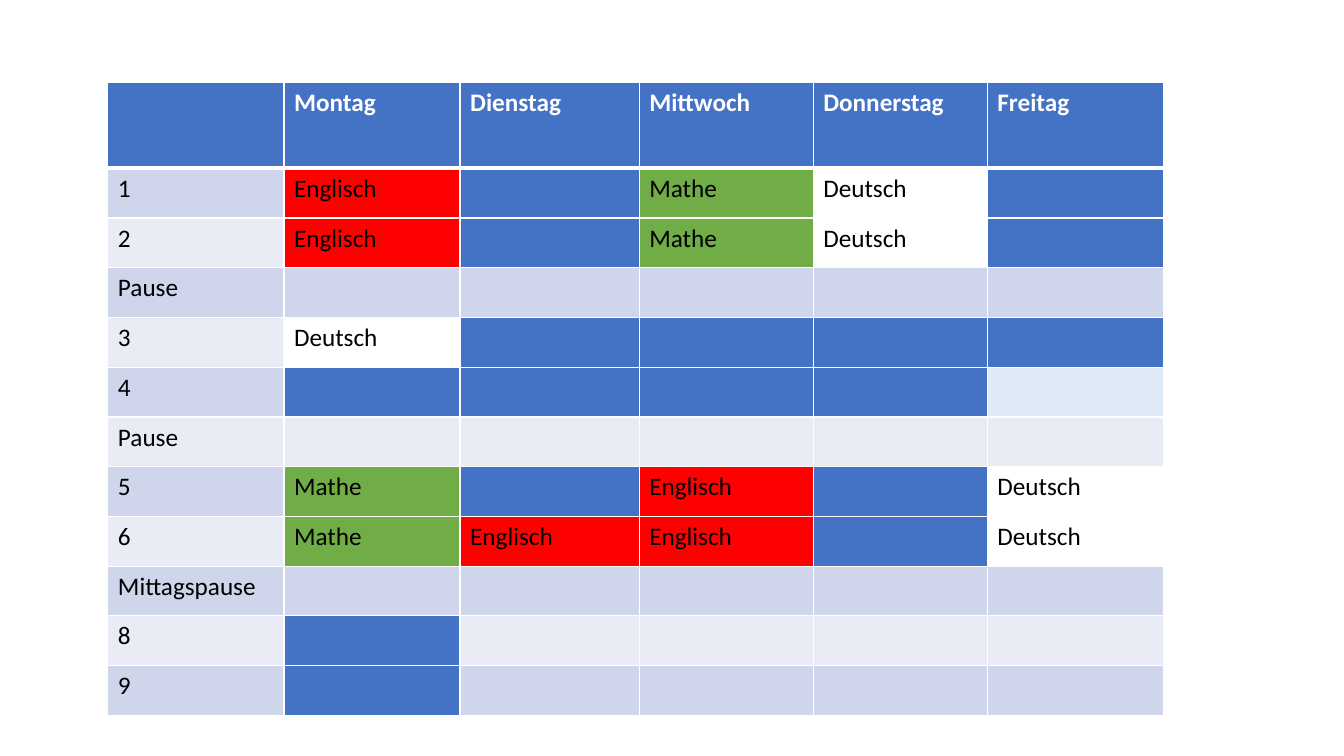
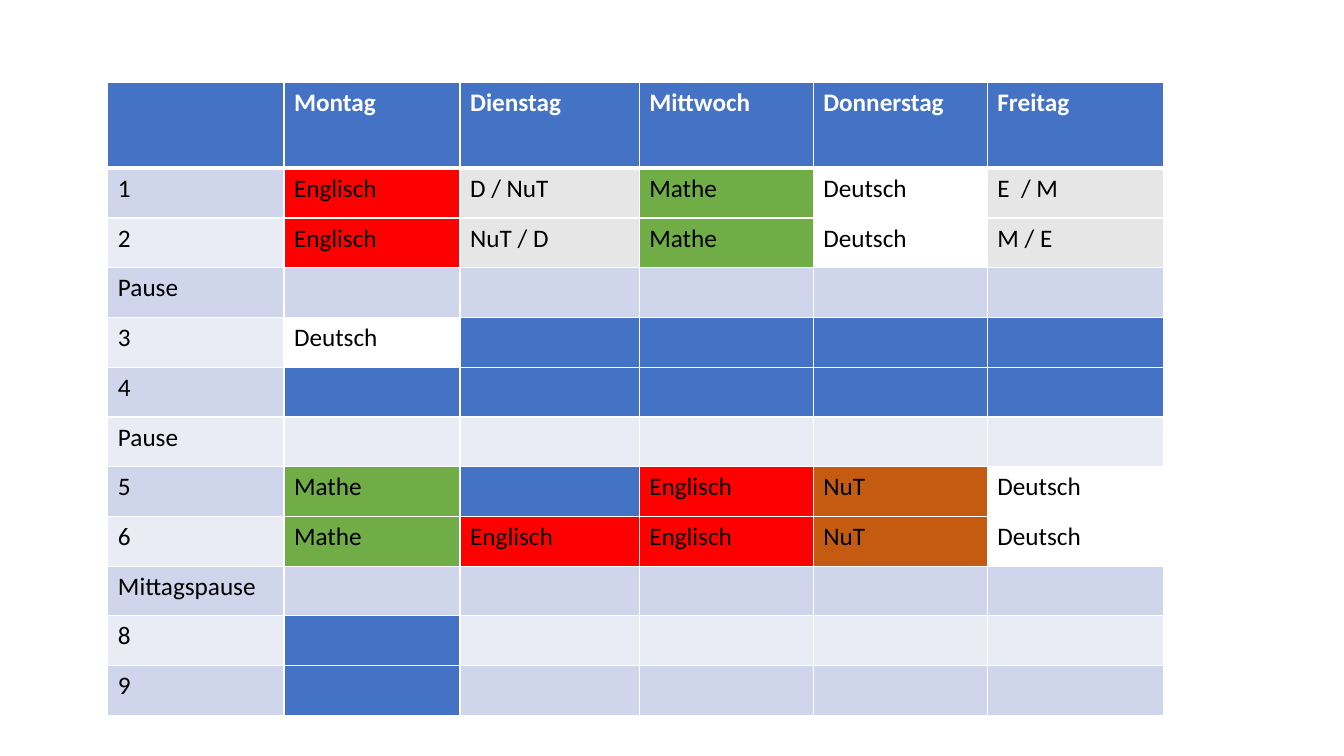
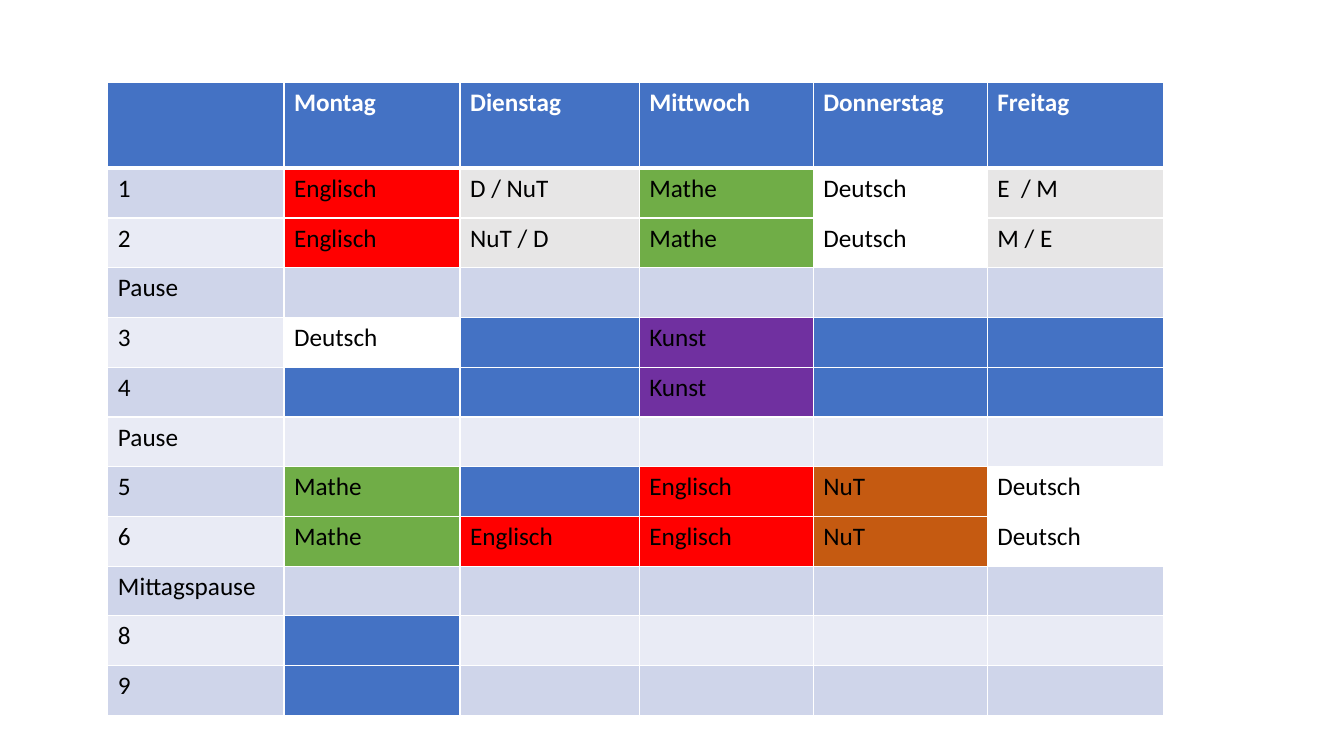
"""Build three stages of a weekly school timetable."""
from dataclasses import dataclass

from lxml import etree
from pptx import Presentation, util as u
from pptx.dml.color import RGBColor
from pptx.oxml.ns import qn

OPEN, LIGHT, BAND = "open", "light", "band"
BLANKS = (OPEN, LIGHT, BAND)
DAYS = ["", "Montag", "Dienstag", "Mittwoch", "Donnerstag", "Freitag"]
PERIODS = [
    ("1", ["Englisch", OPEN, "Mathe", "Deutsch", OPEN]),
    ("2", ["Englisch", OPEN, "Mathe", "Deutsch", OPEN]),
    ("Pause", [BAND] * 5),
    ("3", ["Deutsch"] + [OPEN] * 4),
    ("4", [OPEN] * 5),
    ("Pause", [BAND] * 5),
    ("5", ["Mathe", OPEN, "Englisch", OPEN, "Deutsch"]),
    ("6", ["Mathe", "Englisch", "Englisch", OPEN, "Deutsch"]),
    ("Mittagspause", [BAND] * 5),
    ("8", [OPEN] + [BAND] * 4),
    ("9", [OPEN] + [BAND] * 4),
]
SCIENCE = {
    ("1", "Dienstag"): "D / NuT", ("1", "Freitag"): "E  / M",
    ("2", "Dienstag"): "NuT / D", ("2", "Freitag"): "M / E",
    ("5", "Donnerstag"): "NuT", ("6", "Donnerstag"): "NuT",
}
ART = {("3", "Mittwoch"): "Kunst", ("4", "Mittwoch"): "Kunst"}
STAGES = [{("4", "Freitag"): LIGHT}, SCIENCE, SCIENCE | ART]

SLIDE_SIZE = (13.33, 7.5)
LEFT, TOP, WIDTH, HEIGHT = 1.07, 0.82, 10.47, 6.28
HEADER_HEIGHT = 0.85
DAY_WEIGHTS = [1.75, 1.75, 1.78, 1.73, 1.73, 1.75]


@dataclass(frozen=True)
class Theme:
    font: str = "Calibri"
    size: int = 18
    header: str = "4472C4"
    header_text: str = "FFFFFF"
    text: str = "000000"
    border: str = "FFFFFF"
    thin: int = 1
    thick: int = 3
    shared: str = "E7E6E6"
    bands: tuple = ("CFD5EA", "E9EBF5")


THEME = Theme()
LESSON_FILLS = {
    OPEN: THEME.header, LIGHT: "DEEBF7", "Englisch": "FF0000", "Mathe": "70AD47",
    "Deutsch": "FFFFFF", "NuT": "C55A11", "Kunst": "7030A0",
}


def set_borders(cell, top, bottom):
    properties = cell._tc.get_or_add_tcPr()
    widths = {"lnL": THEME.thin, "lnR": THEME.thin, "lnT": top, "lnB": bottom}
    for place, (side, width) in enumerate(widths.items()):
        line = etree.Element(qn(f"a:{side}"), w=str(u.Pt(width)))
        solid = etree.SubElement(line, qn("a:solidFill"))
        etree.SubElement(solid, qn("a:srgbClr"), val=THEME.border)
        properties.insert(place, line)


def fill_cell(cell, words, fill, row):
    header = row == 0
    cell.fill.solid()
    cell.fill.fore_color.rgb = RGBColor.from_string(fill)
    set_borders(cell, THEME.thick if row == 1 else THEME.thin,
                THEME.thick if header else THEME.thin)
    if words:
        run = cell.text_frame.paragraphs[0].add_run()
        run.text = words
        run.font.name = THEME.font
        run.font.size = u.Pt(THEME.size)
        run.font.bold = header
        run.font.color.rgb = RGBColor.from_string(THEME.header_text if header else THEME.text)


def add_timetable(slide, changes):
    timetable = slide.shapes.add_table(
        len(PERIODS) + 1, len(DAYS), *map(u.Inches, (LEFT, TOP, WIDTH, HEIGHT))).table
    timetable.first_row = timetable.horz_banding = False
    for column, weight in zip(timetable.columns, DAY_WEIGHTS):
        column.width = u.Inches(WIDTH * weight / sum(DAY_WEIGHTS))
    period_height = (HEIGHT - HEADER_HEIGHT) / len(PERIODS)
    for row, line in enumerate(timetable.rows):
        line.height = u.Inches(period_height if row else HEADER_HEIGHT)

    for column, day in enumerate(DAYS):
        fill_cell(timetable.cell(0, column), day, THEME.header, 0)
    for row, (period, lessons) in enumerate(PERIODS, 1):
        band = THEME.bands[(row - 1) % 2]
        fill_cell(timetable.cell(row, 0), period, band, row)
        for column, planned in enumerate(lessons, 1):
            lesson = changes.get((period, DAYS[column]), planned)
            fill = band if lesson == BAND else LESSON_FILLS.get(lesson, THEME.shared)
            fill_cell(timetable.cell(row, column), "" if lesson in BLANKS else lesson, fill, row)


def main():
    deck = Presentation()
    deck.slide_width, deck.slide_height = map(u.Inches, SLIDE_SIZE)
    for changes in STAGES:
        add_timetable(deck.slides.add_slide(deck.slide_layouts[6]), changes)
    deck.save("out.pptx")


if __name__ == "__main__":
    main()
